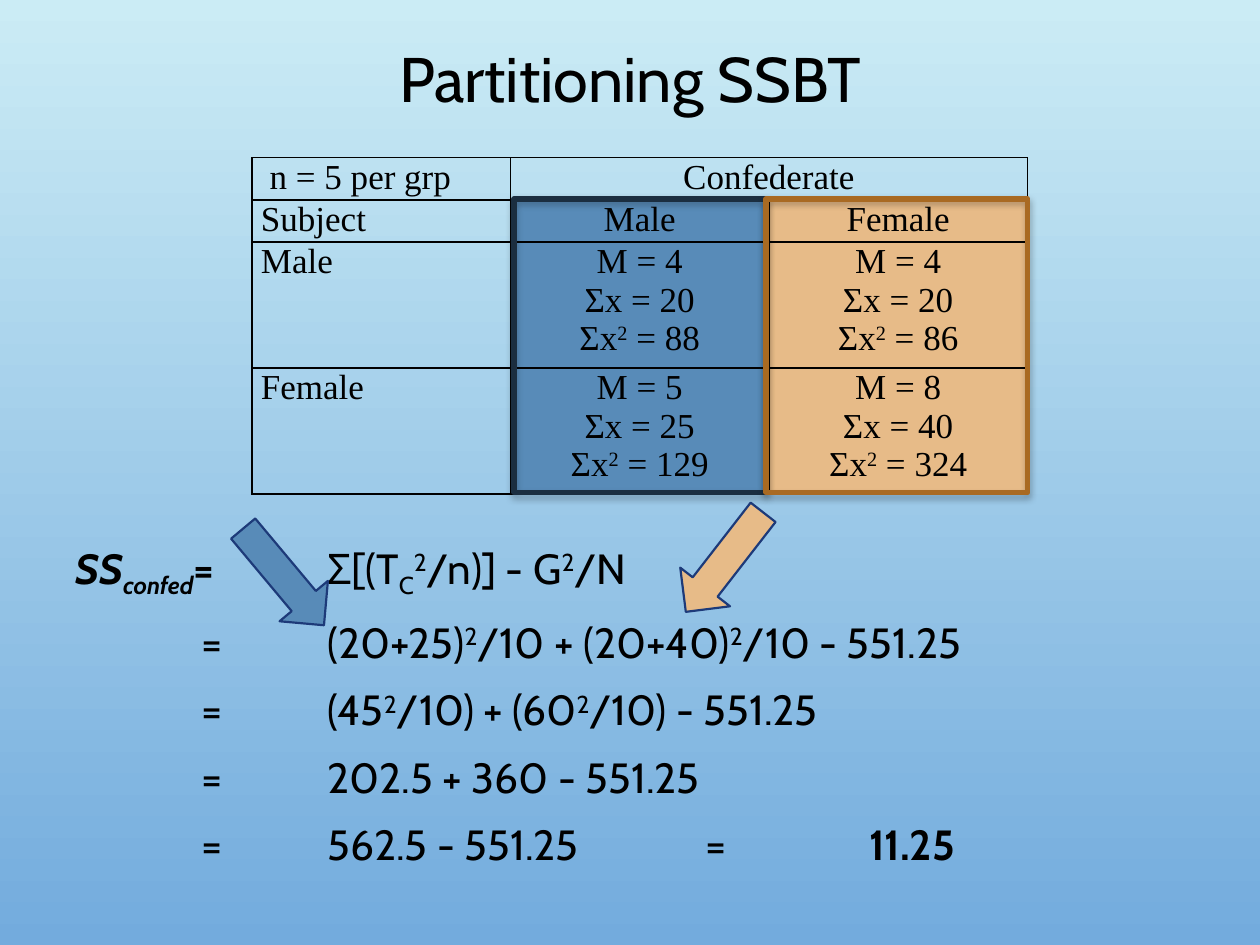
from lxml import etree
from pptx import Presentation
from pptx.dml.color import RGBColor
from pptx.enum.shapes import MSO_SHAPE as Preset
from pptx.enum.text import MSO_ANCHOR as Anchor, PP_ALIGN as Align
from pptx.oxml.ns import qn
from pptx.util import Cm, Pt

COLORS = {
    "sky": "CBECF5", "horizon": "73ABDD", "ink": "000000",
    "blue": "588BB8", "blue_frame": "1B2E40",
    "orange": "E7BB88", "orange_frame": "A96A22", "arrow_line": "1D3A79",
}
SQUARED = ("2", {"base": 30})
TAB_STOPS = (2.54, 5.08, 12.7, 16)


def color(name):
    return RGBColor.from_string(COLORS[name])


def add_element(parent, tag, **attributes):
    return etree.SubElement(parent, qn(tag), {key: str(value) for key, value in attributes.items()})


def write(para, spans, font="Cabin", size=24, bold=False, italic=False, base=0):
    """Write spans, each plain text or a (text, format changes) pair."""
    for item in spans:
        text, changes = (item, {}) if isinstance(item, str) else item
        style = {"bold": bold, "italic": italic, "base": base, **changes}
        span = para.add_run()
        span.text = text
        span.font.name = font
        span.font.size = Pt(size)
        span.font.bold = style["bold"]
        span.font.italic = style["italic"]
        span.font.color.rgb = color("ink")
        if style["base"]:
            span.font._element.set("baseline", str(style["base"] * 1000))


def paragraphs(frame, count):
    return [frame.paragraphs[0]] + [frame.add_paragraph() for _ in range(count - 1)]


class SlideBuilder:
    def __init__(self, deck):
        self.slide = deck.slides.add_slide(deck.slide_layouts[6])
        self.shapes = self.slide.shapes

    def background(self, top, bottom):
        fill = self.slide.background.fill
        fill.gradient()
        fill.gradient_angle = 270
        for stop, name in zip(fill.gradient_stops, (top, bottom)):
            stop.color.rgb = color(name)

    def text_box(self, left, top, width, height, anchor=Anchor.TOP):
        frame = self.shapes.add_textbox(Cm(left), Cm(top), Cm(width), Cm(height)).text_frame
        frame.word_wrap = True
        frame.vertical_anchor = anchor
        return frame

    def title(self, text):
        para = self.text_box(1.27, 0.76, 22.86, 1.78, Anchor.MIDDLE).paragraphs[0]
        para.alignment = Align.CENTER
        para.line_spacing = 0.9
        write(para, [text], size=36)

    def equations(self, lines):
        frame = self.text_box(1.27, 10.8, 22.86, 6.99)
        for index, (para, spans) in enumerate(zip(paragraphs(frame, len(lines)), lines)):
            tabs = add_element(para._p.get_or_add_pPr(), "a:tabLst")
            for stop in TAB_STOPS:
                add_element(tabs, "a:tab", pos=Cm(stop), algn="l")
            if index:
                para.space_before = Pt(9.6)
            write(para, spans, size=24.1)

    def table(self, rows, left, top, column_width, line_height):
        columns = len(rows[0])
        height = line_height * sum(len(row[1]) for row in rows)
        table = self.shapes.add_table(len(rows), columns, Cm(left), Cm(top),
                                      Cm(column_width * columns), Cm(height)).table
        table.first_row = table.horz_banding = False
        for column in table.columns:
            column.width = Cm(column_width)
        for row_index, row in enumerate(rows):
            table.rows[row_index].height = Cm(line_height * len(row[1]))
            for column_index, lines in enumerate(row):
                fill = (None, "blue", "orange")[column_index] if row_index else None
                self.cell(table.cell(row_index, column_index), lines, fill,
                          Align.CENTER if column_index else Align.LEFT)
        table.cell(0, 1).merge(table.cell(0, 2))

    def cell(self, cell, lines, fill, alignment):
        cell.margin_left = cell.margin_right = Cm(0.18)
        cell.margin_top = cell.margin_bottom = 0
        properties = cell._tc.get_or_add_tcPr()
        for side in ("a:lnL", "a:lnR", "a:lnT", "a:lnB"):
            border = add_element(properties, side, w=Pt(1))
            add_element(add_element(border, "a:solidFill"), "a:srgbClr", val=COLORS["ink"])
        if fill:
            cell.fill.solid()
            cell.fill.fore_color.rgb = color(fill)
        else:
            cell.fill.background()
        for para, spans in zip(paragraphs(cell.text_frame, len(lines)), lines):
            para.alignment = alignment
            write(para, spans, font="Times New Roman", size=20)

    def shape(self, preset, left, top, width, height, line, weight, fill=None):
        shape = self.shapes.add_shape(preset, Cm(left), Cm(top), Cm(width), Cm(height))
        shape.shadow.inherit = False
        shape.line.color.rgb = color(line)
        shape.line.width = Pt(weight)
        if fill:
            shape.fill.solid()
            shape.fill.fore_color.rgb = color(fill)
        else:
            shape.fill.background()
        return shape

    def column_frame(self, left, width, line):
        frame = self.shape(Preset.RECTANGLE, left, 4.01, width, 5.92, line, 3)
        effects = frame._element.spPr.find(qn("a:effectLst"))
        shadow = add_element(effects, "a:outerShdw", blurRad=Pt(4), dist=Pt(2),
                             dir=90 * 60000, rotWithShape=0)
        shade = add_element(shadow, "a:srgbClr", val=COLORS["ink"])
        add_element(shade, "a:alpha", val=28000)

    def arrow(self, left, top, rotation, fill):
        arrow = self.shape(Preset.UP_ARROW, left, top, 1.27, 2.54, "arrow_line", 1.25, fill)
        arrow.rotation = rotation


def statistics(mean, total, squares):
    return [[f"M = {mean}"], [f"Σx = {total}"], ["Σx", SQUARED, f" = {squares}"]]


def main():
    deck = Presentation()
    deck.slide_width, deck.slide_height = Cm(25.4), Cm(19.05)
    builder = SlideBuilder(deck)
    builder.background("sky", "horizon")
    builder.title("Partitioning SSBT")
    builder.equations([
        [("SS", {"bold": True, "italic": True}),
         ("confed", {"bold": True, "italic": True, "base": -25}),
         ("=", {"bold": True}), "\tΣ[(T", ("C", {"base": -25}), SQUARED,
         "/n)] - G", SQUARED, "/N"],
        ["\t=\t(20+25)", SQUARED, "/10 + (20+40)", SQUARED, "/10 - 551.25"],
        ["\t=\t(45", SQUARED, "/10) + (60", SQUARED, "/10) - 551.25"],
        ["\t=\t202.5 + 360 - 551.25"],
        ["\t=\t562.5 - 551.25\t=\t", ("11.25", {"bold": True})],
    ])
    builder.table([
        [[["\N{NO-BREAK SPACE}n = 5 per grp"]], [["Confederate"]], []],
        [[["Subject"]], [["Male"]], [["Female"]]],
        [[["Male"]], statistics(4, 20, 88), statistics(4, 20, 86)],
        [[["Female"]], statistics(5, 25, 129), statistics(8, 40, 324)],
    ], left=5.08, top=3.18, column_width=5.21, line_height=0.78)
    builder.column_frame(10.36, 5.08, "blue_frame")
    builder.column_frame(15.44, 5.28, "orange_frame")
    builder.arrow(13.97, 10.06, 217.8, "orange")
    builder.arrow(5.08, 10.36, 140.1, "blue")
    deck.save("out.pptx")


if __name__ == "__main__":
    main()
